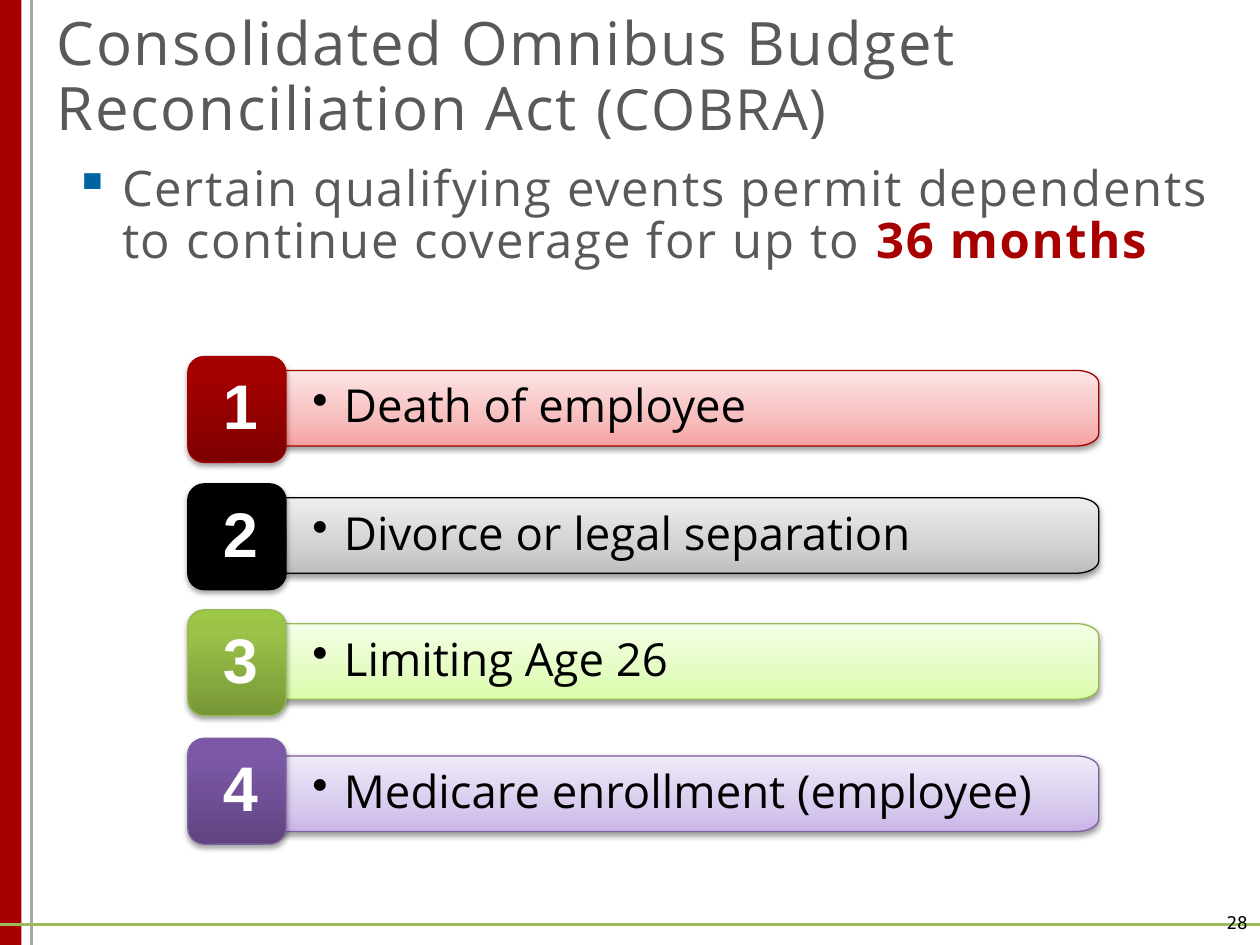
from math import cos, pi, sin

from lxml.etree import SubElement
from pptx import Presentation
from pptx.dml.color import RGBColor
from pptx.enum.shapes import MSO_CONNECTOR as Conn, MSO_SHAPE as Shape
from pptx.enum.text import MSO_ANCHOR as Anchor, PP_ALIGN as Align
from pptx.oxml.ns import qn
from pptx.util import Inches, Pt

RED, GREY, BLUE = "A80000", "595959", "0064A2"
BAR_X, BAR_W, BAR_H = 2.18, 6.54, 0.6
TAG_X, TAG_W, TAG_H = 1.49, 0.78, 0.84

# label, badge top, bar top, line, badge stops, bar stops
ROWS = [
    ("Death of employee", 2.83, 2.94, "A40000",
     ("7D0000", "A30000", "A40000"), ("F6A0A0", "F7BDBD", "FDE5E5")),
    ("Divorce or legal separation", 3.84, 3.95, "000000",
     ("000000",), ("BDBDBD", "D1D1D1", "EEEEEE")),
    ("Limiting Age 26", 4.84, 4.95, "98B955",
     ("779737", "9BC348", "9DC746"), ("DAFDA7", "E4FCC2", "F5FFE7")),
    ("Medicare enrollment (employee)", 5.86, 6.0, "7D60A0",
     ("5F4480", "7B58A6", "7C57A8"), ("C9B5E8", "D8CBEE", "F0EAF9")),
]


def rgb(code):
    return RGBColor.from_string(code)


def put(item, **values):
    for name, value in values.items():
        setattr(item, name, value)


def frame(shape, anchor, left, top, right, bottom):
    put(shape.text_frame, word_wrap=True, vertical_anchor=anchor,
        margin_left=Inches(left), margin_top=Inches(top),
        margin_right=Inches(right), margin_bottom=Inches(bottom))
    return shape.text_frame.paragraphs[0]


def write(para, text, size, color, name="Open Sans", bold=False, gap=0):
    """Add a run; gap is the letter spacing in points."""
    run = para.add_run()
    run.text = text
    put(run.font, size=Pt(size), name=name, bold=bold)
    run.font.color.rgb = rgb(color)
    if gap:
        run.font._element.set("spc", str(gap * 100))


def bullet(para, char, indent, color):
    props = para._p.get_or_add_pPr()
    props.set("marL", str(Inches(indent)))
    props.set("indent", str(-Inches(indent)))
    tint = SubElement(props, qn("a:buClr"))
    SubElement(tint, qn("a:srgbClr"), val=color)
    SubElement(props, qn("a:buChar"), char=char)


def paint(shape, colors, middle):
    """Fill with one colour, or with three that run from bottom to top."""
    if len(colors) == 1:
        shape.fill.solid()
        shape.fill.fore_color.rgb = rgb(colors[0])
        return
    shape.fill.gradient()
    shape.fill.gradient_angle = 90
    stops = next(shape._element.spPr.iter(qn("a:gsLst")))
    for old in list(stops):
        stops.remove(old)
    for place, color in zip((0, middle, 100), colors):
        stop = SubElement(stops, qn("a:gs"), pos=str(place * 1000))
        SubElement(stop, qn("a:srgbClr"), val=color)


def shade(shape, alpha, dist):
    shape.shadow.inherit = False
    effects = shape._element.spPr.find(qn("a:effectLst"))
    outer = SubElement(effects, qn("a:outerShdw"), blurRad=str(Pt(3.1)),
                       dist=str(Pt(dist)), dir="5400000", rotWithShape="0")
    color = SubElement(outer, qn("a:srgbClr"), val="000000")
    SubElement(color, qn("a:alpha"), val=str(alpha * 1000))


def edge(shape, color):
    shape.line.color.rgb = rgb(color)
    shape.line.width = Pt(0.75)


def rule(slide, x1, y1, x2, y2, color, width):
    line = slide.shapes.add_connector(
        Conn.STRAIGHT, Inches(x1), Inches(y1), Inches(x2), Inches(y2))
    line.line.color.rgb = rgb(color)
    line.line.width = Pt(width)
    SubElement(line._element.spPr, qn("a:effectLst"))


def box(slide, x, y, w, h):
    return slide.shapes.add_textbox(Inches(x), Inches(y), Inches(w), Inches(h))


def bar(slide, top, label, line, colors):
    """Draw a bar with its two right corners rounded."""
    rx, ry, steps = 0.18, 0.1, 12
    right, base = BAR_X + BAR_W, top + BAR_H
    turns = [i * pi / 2 / steps for i in range(steps + 1)]
    upper = [(right - rx + rx * sin(t), top + ry - ry * cos(t)) for t in turns]
    lower = [(x, top + base - y) for x, y in reversed(upper)]
    points = upper + lower + [(BAR_X, base)]
    path = slide.shapes.build_freeform(Inches(BAR_X), Inches(top))
    path.add_line_segments([(Inches(x), Inches(y)) for x, y in points])
    shape = path.convert_to_shape()
    paint(shape, colors, 35)
    edge(shape, line)
    shade(shape, 38, 1.6)
    para = frame(shape, Anchor.MIDDLE, 0.3, 0.1, 0.15, 0.1)
    bullet(para, "•", 0.25, "000000")
    put(para, alignment=Align.LEFT, line_spacing=0.9)
    write(para, label, 26, "000000")


def badge(slide, top, number, line, colors):
    shape = slide.shapes.add_shape(
        Shape.ROUNDED_RECTANGLE, Inches(TAG_X), Inches(top),
        Inches(TAG_W), Inches(TAG_H))
    paint(shape, colors, 80)
    edge(shape, line)
    shade(shape, 35, 1.8)
    para = frame(shape, Anchor.MIDDLE, 0.24, 0, 0.24, 0)
    put(para, alignment=Align.CENTER, line_spacing=0.9)
    write(para, str(number), 36, "FFFFFF", "Arial", True)


def trim(slide):
    """Draw the red band and the rules at the slide's edges."""
    band = slide.shapes.add_shape(
        Shape.RECTANGLE, 0, 0, Inches(0.17), Inches(7.5))
    paint(band, (RED,), 0)
    band.line.fill.background()
    band.shadow.inherit = False
    rule(slide, 0.25, 0, 0.25, 7.5, "A6A6A6", 2.25)
    rule(slide, 0, 7.34, 10, 7.34, "9BBB59", 1.5)


def title(slide):
    para = frame(box(slide, 0.25, 0, 9.75, 1.25), Anchor.MIDDLE,
                 0.2, 0.05, 0.1, 0.05)
    para.line_spacing = 0.9
    write(para, "Consolidated Omnibus Budget Reconciliation Act ",
          34.2, GREY, gap=1)
    write(para, "(COBRA)", 32.4, GREY, gap=1)


def body(slide):
    shape = box(slide, 0.49, 1.25, 9.51, 5.83)
    paint(shape, ("FFFFFF",), 0)
    para = frame(shape, Anchor.TOP, 0.1, 0.05, 0.1, 0.05)
    bullet(para, "▪", 0.38, BLUE)
    para.line_spacing = 0.9
    write(para, "Certain qualifying events permit dependents to continue "
          "coverage for up to ", 28, GREY, gap=1)
    write(para, "36 months", 28, RED, bold=True, gap=1)


def folio(slide):
    para = frame(box(slide, 9.42, 7.19, 0.58, 0.4), Anchor.TOP,
                 0.1, 0.05, 0.1, 0.05)
    para.alignment = Align.RIGHT
    write(para, "28", 10, "000000", "DejaVu Sans Mono")


def main():
    deck = Presentation()
    put(deck, slide_width=Inches(10), slide_height=Inches(7.5))
    slide = deck.slides.add_slide(deck.slide_layouts[6])
    trim(slide)
    title(slide)
    body(slide)
    for number, row in enumerate(ROWS, 1):
        label, tag_y, bar_y, line, dark, light = row
        bar(slide, bar_y, label, line, light)
        badge(slide, tag_y, number, line, dark)
    folio(slide)
    deck.save("out.pptx")


if __name__ == "__main__":
    main()
